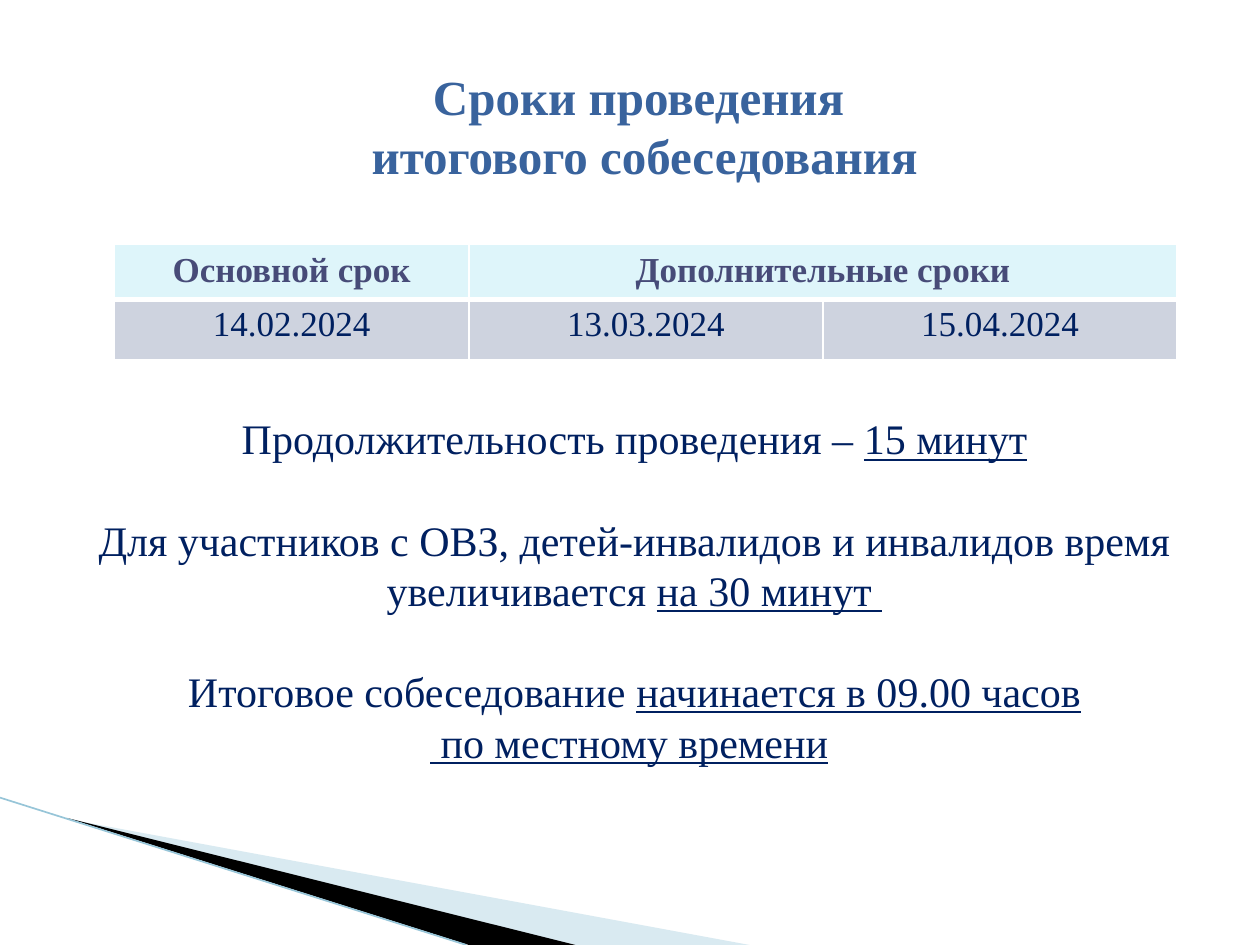
from dataclasses import dataclass

from lxml import etree
from pptx import Presentation
from pptx import util as u
from pptx.dml.color import RGBColor
from pptx.enum import shapes, text
from pptx.oxml import ns


@dataclass(frozen=True)
class Theme:
    font: str = "Times New Roman"
    title: str = "39639D"
    body: str = "002060"
    header_text: str = "474B78"
    header_fill: str = "DEF5FA"
    row_fill: str = "CED3DF"
    border: str = "FFFFFF"
    wedge: str = "A0CBDC"
    dark_wedge: str = "000000"
    edge: str = "97C5D8"
    title_size: int = 28
    body_size: int = 24
    table_size: int = 20


THEME = Theme()


@dataclass(frozen=True)
class Box:
    """A region of the slide, in centimetres."""
    left: float
    top: float
    width: float
    height: float

    def lengths(self):
        return [u.Cm(v) for v in (self.left, self.top, self.width, self.height)]

    def point(self, x, y):
        return u.Cm(self.left + x), u.Cm(self.top + y)


def colour(value):
    return RGBColor.from_string(value)


def write_paragraph(paragraph, pieces, size, ink, bold=False):
    """Fill a centred paragraph with (text, underlined) pieces."""
    paragraph.alignment = text.PP_ALIGN.CENTER
    font = paragraph.font
    font.name, font.size, font.bold = THEME.font, u.Pt(size), bold
    font.color.rgb = colour(ink)
    for words, underlined in pieces:
        for index, line in enumerate(words.split("\n")):
            if index:
                paragraph.add_line_break()
            run = paragraph.add_run()
            run.text = line
            if underlined:
                run.font.underline = True


def add_wedge(slide, box, points, fill, opacity=100):
    start, *others = [box.point(*point) for point in points]
    builder = slide.shapes.build_freeform(*start)
    builder.add_line_segments(others, close=True)
    shape = builder.convert_to_shape()
    shape.shadow.inherit = False
    shape.fill.solid()
    shape.fill.fore_color.rgb = colour(fill)
    shape.line.fill.background()
    if opacity < 100:
        tint = shape.fill._xPr.find(".//" + ns.qn("a:srgbClr"))
        etree.SubElement(tint, ns.qn("a:alpha"), val=str(opacity * 1000))


def add_corner(slide, box):
    # Two wedges and a thin edge running down to the bottom of the slide
    bottom = box.height
    add_wedge(slide, box, [(1.4, 0.44), (box.width, bottom), (11.58, bottom)],
              THEME.wedge, opacity=40)
    add_wedge(slide, box, [(1.35, 0.41), (11.6, bottom), (9.45, bottom)],
              THEME.dark_wedge)
    edge = slide.shapes.add_connector(
        shapes.MSO_CONNECTOR.STRAIGHT, *box.point(0, 0), *box.point(9.4, bottom))
    edge.line.color.rgb = colour(THEME.edge)
    edge.line.width = u.Pt(0.95)
    etree.SubElement(edge._element.spPr, ns.qn("a:effectLst"))


def add_title(slide, box):
    title = slide.shapes.title
    title.left, title.top, title.width, title.height = box.lengths()
    frame = title.text_frame
    frame.vertical_anchor = text.MSO_ANCHOR.MIDDLE
    write_paragraph(frame.paragraphs[0],
                    [("Сроки проведения \nитогового собеседования", False)],
                    THEME.title_size, THEME.title, bold=True)


def set_borders(cell, bottom):
    properties = cell._tc.get_or_add_tcPr()
    for side, width in (("L", 1), ("R", 1), ("T", 1), ("B", bottom)):
        line = etree.SubElement(properties, ns.qn("a:ln" + side), w=str(u.Pt(width)))
        fill = etree.SubElement(line, ns.qn("a:solidFill"))
        etree.SubElement(fill, ns.qn("a:srgbClr"), val=THEME.border)


def add_dates(slide, box):
    rows = [["Основной срок", "Дополнительные сроки", ""],
            ["14.02.2024", "13.03.2024", "15.04.2024"]]
    table = slide.shapes.add_table(2, 3, *box.lengths()).table
    for column in table.columns:
        column.width = u.Cm(box.width / 3)
    header_height = 1.1
    table.rows[0].height = u.Cm(header_height)
    table.rows[1].height = u.Cm(box.height - header_height)
    table.cell(0, 1).merge(table.cell(0, 2))
    for row, labels in enumerate(rows):
        header = row == 0
        for column, label in enumerate(labels):
            cell = table.cell(row, column)
            set_borders(cell, bottom=3 if header else 1)
            cell.fill.solid()
            cell.fill.fore_color.rgb = colour(
                THEME.header_fill if header else THEME.row_fill)
            if label:
                write_paragraph(cell.text_frame.paragraphs[0], [(label, False)],
                                THEME.table_size,
                                THEME.header_text if header else THEME.body,
                                bold=header)


def add_rules(slide, box):
    rules = [
        [("Продолжительность проведения – ", False), ("15 минут", True)],
        [("Для участников с ОВЗ, детей-инвалидов и инвалидов время увеличивается ", False),
         ("на 30 минут ", True)],
        [("Итоговое собеседование ", False),
         ("начинается в 09.00 часов\n по местному времени", True), (" ", False)],
    ]
    frame = slide.shapes.add_textbox(*box.lengths()).text_frame
    frame.word_wrap = True
    for index, pieces in enumerate(rules):
        paragraph = frame.add_paragraph() if index else frame.paragraphs[0]
        if index:
            paragraph.space_before = u.Pt(29)
        write_paragraph(paragraph, pieces, THEME.body_size, THEME.body)


def main():
    presentation = Presentation()
    presentation.slide_width, presentation.slide_height = u.Cm(25.4), u.Cm(19.05)
    slide = presentation.slides.add_slide(presentation.slide_layouts[5])
    add_corner(slide, Box(0, 16.08, 15.11, 2.97))
    add_title(slide, Box(1.68, 1.63, 22.63, 1.8))
    add_rules(slide, Box(0.89, 8.2, 23.8, 7.4))
    add_dates(slide, Box(2.31, 4.93, 21.42, 2.31))
    presentation.save("out.pptx")


if __name__ == "__main__":
    main()
